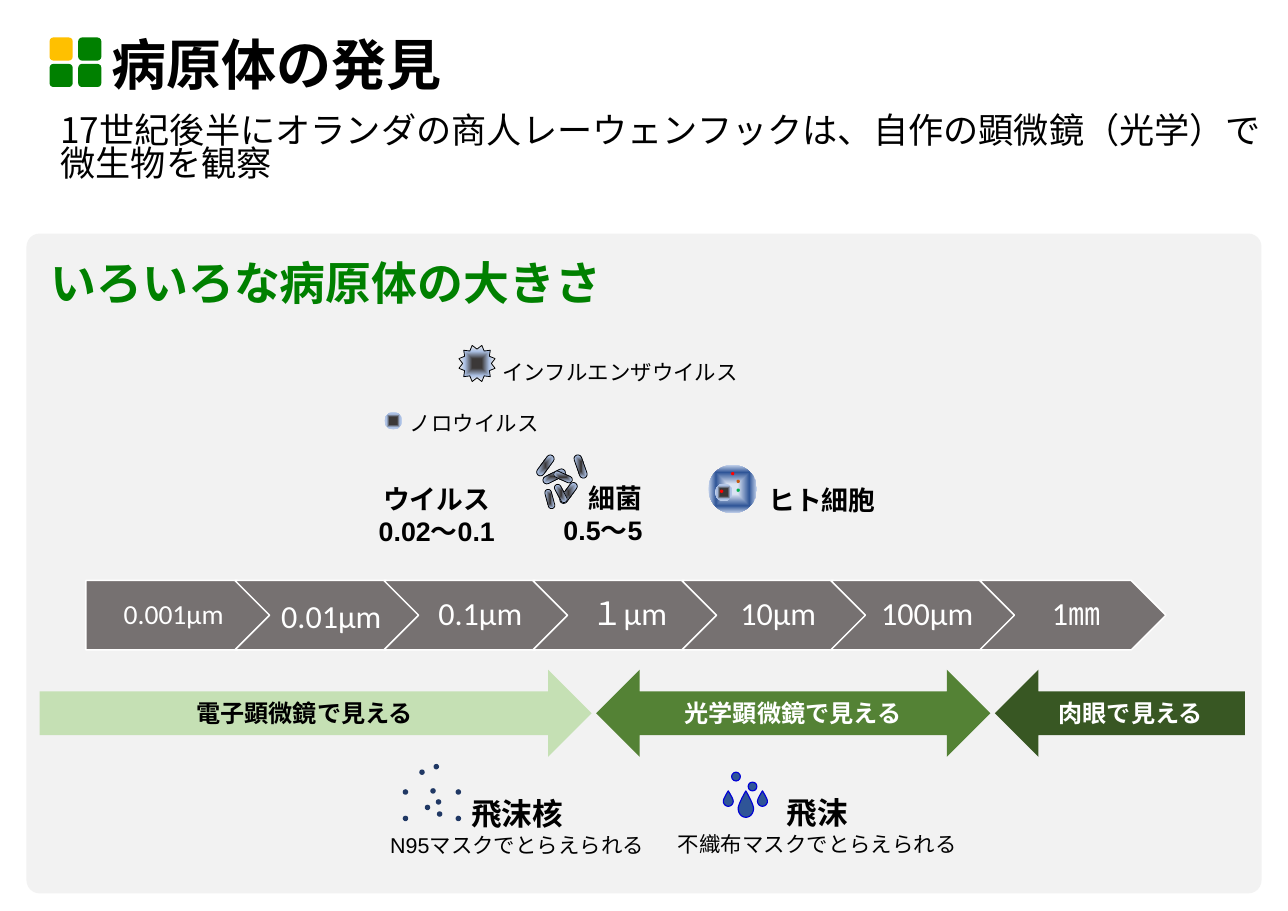
import math

from lxml import etree
from pptx import Presentation
from pptx.dml.color import RGBColor
from pptx.enum.shapes import MSO_SHAPE
from pptx.enum.text import MSO_ANCHOR, MSO_AUTO_SIZE, PP_ALIGN
from pptx.oxml.ns import qn
from pptx.util import Inches, Pt

LEFT, CENTER, RIGHT = PP_ALIGN.LEFT, PP_ALIGN.CENTER, PP_ALIGN.RIGHT
TOP, MIDDLE = MSO_ANCHOR.TOP, MSO_ANCHOR.MIDDLE
NO_AUTOFIT = MSO_AUTO_SIZE.NONE
OVAL, ROUNDED = MSO_SHAPE.OVAL, MSO_SHAPE.ROUNDED_RECTANGLE
PENTAGON, CHEVRON = MSO_SHAPE.PENTAGON, MSO_SHAPE.CHEVRON
RIGHT_ARROW, LEFT_ARROW = MSO_SHAPE.RIGHT_ARROW, MSO_SHAPE.LEFT_ARROW
BOTH_ARROW = MSO_SHAPE.LEFT_RIGHT_ARROW

JAPANESE = "Noto Sans CJK JP"
BLACK, WHITE, GREEN = "000000", "FFFFFF", "008000"
SOFT_EDGE = [(74, "ABC0E4"), (83, "ABC0E4"), (100, "C7D5ED")]
NOROVIRUS = [(44, "3B3838")] + SOFT_EDGE
BACTERIUM = [(0, "3B3838")] + SOFT_EDGE
INFLUENZA = [(26, "3B3838"), (67, "ABC0E4"), (97, "EDEDED")]
CELL = [(21, "DAE3F3"), (69, "2F5597"), (100, "C7D5ED")]


def rgb(color):
    return RGBColor.from_string(color)


def set_gradient(shape, stops):
    """Fill from the centre outwards; stops are (percent, colour) pairs."""
    shape.fill.background()
    no_fill = shape.fill._xPr.find(qn("a:noFill"))
    gradient = etree.Element(qn("a:gradFill"), rotWithShape="1")
    stop_list = etree.SubElement(gradient, qn("a:gsLst"))
    for percent, color in stops:
        stop = etree.SubElement(stop_list, qn("a:gs"), pos=str(percent * 1000))
        etree.SubElement(stop, qn("a:srgbClr"), val=color)
    shading = etree.SubElement(gradient, qn("a:path"), {"path": "shape"})
    etree.SubElement(shading, qn("a:fillToRect"),
                     {side: "50000" for side in "ltrb"})
    no_fill.getparent().replace(no_fill, gradient)


def style(shape, fill, line=None, width=0.5):
    shape.shadow.inherit = False
    if isinstance(fill, list):
        set_gradient(shape, fill)
    else:
        shape.fill.solid()
        shape.fill.fore_color.rgb = rgb(fill)
    if line:
        shape.line.color.rgb = rgb(line)
        shape.line.width = Pt(width)
    else:
        shape.line.fill.background()
    return shape


def add_preset(shapes, preset, box, fill, line=None, width=0.5):
    shape = shapes.add_shape(preset, *map(Inches, box))
    return style(shape, fill, line, width)


def add_dot(shapes, x, y, size, fill, line=None):
    """Draw a circle centred on x, y."""
    box = (x - size / 2, y - size / 2, size, size)
    return add_preset(shapes, OVAL, box, fill, line, 0.75)


def add_outline(shapes, points, fill, line, width):
    points = [(Inches(x), Inches(y)) for x, y in points]
    builder = shapes.build_freeform(*points[0])
    builder.add_line_segments(points[1:], close=True)
    return style(builder.convert_to_shape(), fill, line, width)


def write(shape, lines, color=BLACK, font="Arial", align=CENTER,
          anchor=MIDDLE, spacing=None):
    """Set the text; lines are (text, size, bold) tuples."""
    frame = shape.text_frame
    frame.word_wrap = True
    frame.auto_size = NO_AUTOFIT
    frame.vertical_anchor = anchor
    for index, (text, size, bold) in enumerate(lines):
        paragraph = frame.add_paragraph() if index else frame.paragraphs[0]
        paragraph.text = text
        paragraph.alignment = align
        paragraph.line_spacing = spacing
        paragraph.font.name = font
        paragraph.font.size = Pt(size)
        paragraph.font.bold = bold
        paragraph.font.color.rgb = rgb(color)
        defaults = paragraph._p.pPr.find(qn("a:defRPr"))
        etree.SubElement(defaults, qn("a:ea"), typeface=JAPANESE)


def add_label(shapes, box, lines, **options):
    label = shapes.add_textbox(*map(Inches, box))
    write(label, lines, **{"anchor": TOP, **options})


def add_title(slide):
    logo = slide.shapes.add_group_shape().shapes
    for index, color in enumerate(["FFC000", GREEN, GREEN, GREEN]):
        row, column = divmod(index, 2)
        box = (0.45 + 0.26 * column, 0.34 + 0.24 * row, 0.21, 0.21)
        add_preset(logo, ROUNDED, box, color)
    title = slide.shapes.title
    title.left, title.top = Inches(0.91), Inches(0.27)
    title.width, title.height = Inches(9.92), Inches(0.68)
    write(title, [("病原体の発見", 36, True)], font=JAPANESE, align=LEFT,
          spacing=0.9)


def add_scale(shapes):
    sizes = ["0.001μm", "0.01μm", "0.1μm", "１μm", "10μm", "100μm", "1㎜"]
    for index, size in enumerate(sizes):
        box = (0.78 + 1.352 * index, 5.27, 1.69, 0.63)
        step = add_preset(shapes, CHEVRON if index else PENTAGON, box,
                          "767171", WHITE, 1)
        write(step, [(size, 21 if index else 18, False)], WHITE, "Calibri",
              spacing=1.0 if index == 1 else 0.9)
        step.text_frame.margin_left = Inches(0.09)
        step.text_frame.margin_right = Inches(0.03)


def add_visibility_arrows(shapes):
    for preset, left, width, fill, color, text in [
        (RIGHT_ARROW, 0.36, 5.01, "C5E0B4", BLACK, "電子顕微鏡で見える"),
        (BOTH_ARROW, 5.41, 3.58, "548235", WHITE, "光学顕微鏡で見える"),
        (LEFT_ARROW, 9.03, 2.27, "385723", WHITE, "肉眼で見える"),
    ]:
        arrow = add_preset(shapes, preset, (left, 6.08, width, 0.79), fill)
        write(arrow, [(text, 15.8, True)], color)


def add_viruses(shapes):
    add_dot(shapes, 3.57, 3.82, 0.16, NOROVIRUS)
    spikes = []
    for index in range(24):
        angle = math.radians(15 * index)
        radius = 0.17 if index % 2 else 0.13
        spikes.append((4.33 + radius * math.cos(angle),
                       3.3 + radius * math.sin(angle)))
    add_outline(shapes, spikes, INFLUENZA, BLACK, 0.5)


def add_bacteria(shapes):
    cluster = shapes.add_group_shape().shapes
    for left, top, width, height, rotation in [
        (5.05, 4.44, 0.22, 0.07, 306.4), (4.92, 4.29, 0.22, 0.07, 333.6),
        (5.0, 4.45, 0.18, 0.06, 61.8), (5.02, 4.3, 0.18, 0.06, 24),
        (4.9, 4.5, 0.18, 0.06, 74.8), (4.84, 4.19, 0.22, 0.07, 306.4),
        (5.16, 4.2, 0.22, 0.07, 250.7),
    ]:
        rod = add_preset(cluster, ROUNDED, (left, top, width, height),
                         BACTERIUM, BLACK)
        rod.adjustments[0] = 0.5
        rod.rotation = rotation


def add_human_cell(shapes):
    cell = shapes.add_group_shape().shapes
    for x, y, size, fill in [
        (6.65, 4.44, 0.44, CELL), (6.65, 4.3, 0.03, "FF0000"),
        (6.7, 4.37, 0.03, "C55A11"), (6.57, 4.47, 0.16, NOROVIRUS),
        (6.55, 4.46, 0.03, "FF0000"), (6.7, 4.45, 0.03, "00B050"),
    ]:
        add_dot(cell, x, y, size, fill)


def add_droplet_nuclei(shapes):
    nuclei = shapes.add_group_shape().shapes
    for x, y in [(3.68, 7.19), (3.68, 7.43), (3.96, 6.96), (4.16, 7.19),
                 (4.16, 7.43), (3.98, 7.28), (3.88, 7.33), (3.99, 7.39),
                 (3.93, 7.18), (3.83, 7.01)]:
        add_dot(nuclei, x, y, 0.05, "203864")


def add_droplets(shapes):
    droplets = shapes.add_group_shape().shapes
    side = []
    for t in (step / 10 for step in range(11)):
        side.append((0.5 * (3 * t * t * (1 - t) + t ** 3),
                     1.5 * t * t * (1 - t) + 0.67 * t ** 3))
    for angle in (math.radians(15 * step) for step in range(1, 7)):
        side.append((0.5 * math.cos(angle), 0.67 + 0.33 * math.sin(angle)))
    tear = side + [(-x, y) for x, y in side[-2:0:-1]]
    for middle, width, height in [(6.77, 0.14, 0.24), (6.92, 0.09, 0.14),
                                  (6.61, 0.09, 0.14)]:
        points = [(middle + width * x, 7.18 + height * y) for x, y in tear]
        add_outline(droplets, points, "2F5597", "0000D6", 0.75)
    for x, y in [(6.68, 7.05), (6.83, 7.14)]:
        add_dot(droplets, x, y, 0.08, "2F5597", "0000D6")


def add_labels(shapes):
    add_label(shapes, (0.45, 1.02, 11.25, 0.75),
              [("17世紀後半にオランダの商人レーウェンフックは、自作の顕微鏡（光学）で\v微生物を観察", 23, False)],
              font=JAPANESE, align=LEFT, spacing=0.77)
    add_label(shapes, (0.36, 2.17, 6.57, 0.78),
              [("いろいろな病原体の大きさ", 30, True)],
              color=GREEN, align=LEFT, anchor=MIDDLE)
    add_label(shapes, (4.33, 3.21, 2.6, 0.34),
              [("インフルエンザウイルス", 14, False)])
    add_label(shapes, (3.48, 3.67, 1.65, 0.34), [("ノロウイルス", 14, False)])
    add_label(shapes, (3.2, 4.33, 1.53, 0.69),
              [("ウイルス", 17.5, True), ("0.02～0.1", 17.5, True)])
    add_label(shapes, (4.87, 4.32, 1.06, 0.69),
              [("細菌", 17.5, True), ("0.5～5", 17.5, True)], align=RIGHT)
    add_label(shapes, (6.79, 4.34, 1.34, 0.4), [("ヒト細胞", 17.5, True)])
    add_label(shapes, (3.14, 7.17, 3.11, 0.67),
              [("飛沫核", 20, True), ("N95マスクでとらえられる", 14, False)])
    add_label(shapes, (5.9, 7.16, 3.04, 0.67),
              [("飛沫", 20, True), ("不織布マスクでとらえられる", 14, False)])


def main():
    deck = Presentation()
    deck.slide_width, deck.slide_height = Inches(11.69), Inches(8.27)
    slide = deck.slides.add_slide(deck.slide_layouts[5])
    shapes = slide.shapes
    add_title(slide)
    panel = add_preset(shapes, ROUNDED, (0.24, 2.12, 11.21, 5.99), "F2F2F2")
    panel.adjustments[0] = 0.02
    for add_part in (add_scale, add_visibility_arrows, add_viruses,
                     add_bacteria, add_human_cell, add_droplet_nuclei,
                     add_droplets, add_labels):
        add_part(shapes)
    deck.save("out.pptx")


if __name__ == "__main__":
    main()
